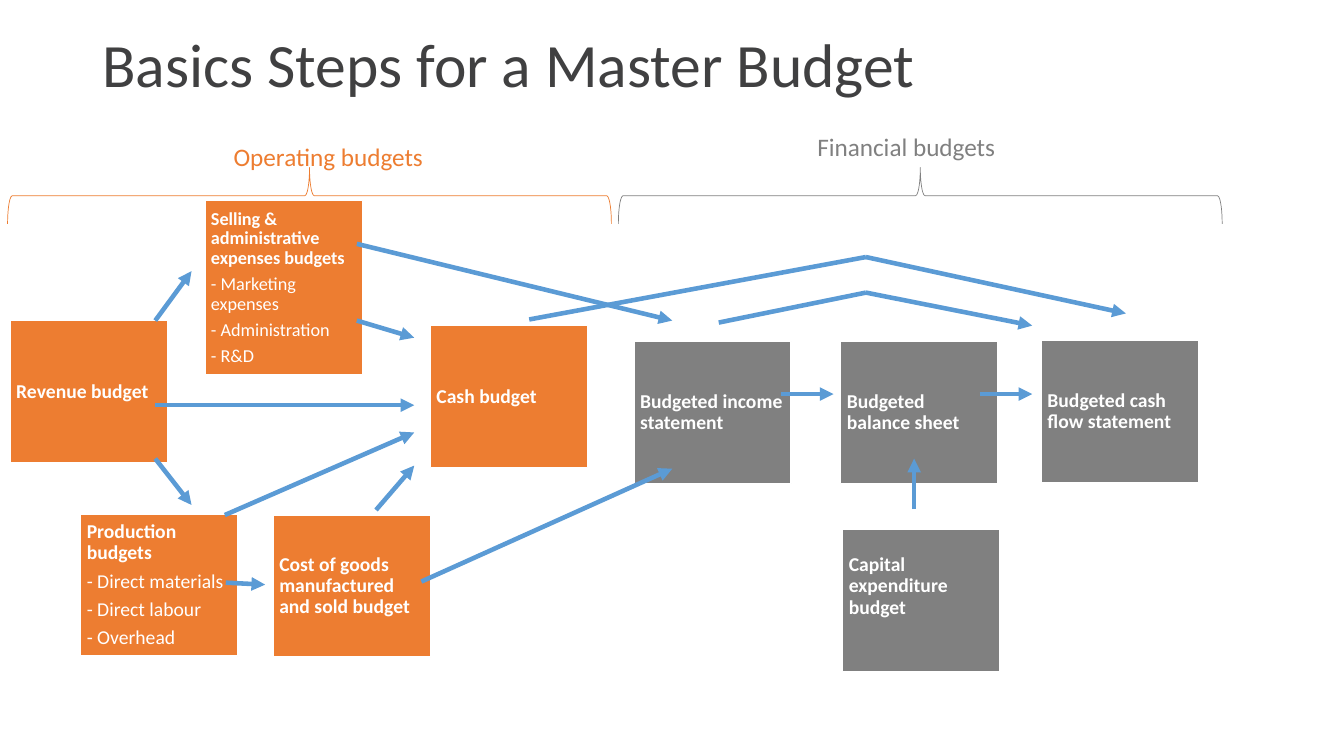
from lxml import etree
from pptx import Presentation
from pptx import util as u
from pptx.dml.color import RGBColor
from pptx.enum import shapes, text
from pptx.oxml import ns

ORANGE = RGBColor(0xED, 0x7D, 0x31)
GREY = RGBColor(0x80, 0x80, 0x80)
BLUE = RGBColor(0x5B, 0x9B, 0xD5)
WHITE = RGBColor(0xFF, 0xFF, 0xFF)
TITLE_GREY = RGBColor(0x40, 0x40, 0x41)
FONT = "Calibri"
CARD_WIDTH, CARD_HEIGHT = 112.3, 101.5
BRACE_DEPTH = 40.3

OPERATING_CARDS = [
    (1.8, 139, ["Revenue budget"], {}),
    (52.2, 277.2, ["Production budgets", "- Direct materials", "- Direct labour", "- Overhead"], {}),
    (189.7, 277.9, ["Cost of goods manufactured and sold budget"], {}),
    (141.5, 53.3, ["Selling & administrative expenses budgets", "- Marketing expenses",
                   "- Administration", "- R&D"], {"height": 124.6, "size": 13, "inset": 3.8}),
    (302, 142.6, ["Cash budget"], {}),
]
FINANCIAL_CARDS = [
    (11.2, 154.1, ["Budgeted income statement"], {}),
    (158.8, 154.1, ["Budgeted balance sheet"], {}),
    (302.1, 153.4, ["Budgeted cash flow statement"], {}),
    (160.2, 288, ["Capital expenditure budget"], {"bottom_inset": 24}),
]
FLOWS = [
    [(105.5, 237.6), (131.4, 270.7)],
    [(105.5, 139), (131.4, 103.7)],
    [(155.9, 326.2), (184, 327.6)],
    [(263.2, 274.3), (290.5, 242.6)],
    [(249.5, 139), (290.5, 151.2)],
    [(105.5, 199.4), (290.5, 199.4)],
    [(249.5, 84.2), (474.8, 139)],
    [(295.6, 325.4), (474.8, 244.8)],
    [(155.2, 277.9), (290.5, 218.9)],
    [(372.6, 138.2), (613.1, 93.6), (798.8, 133.9)],
    [(552.6, 191.5), (590, 191.5)],
    [(647.6, 273.6), (647.6, 237.6)],
    [(694.4, 191.5), (731.9, 191.5)],
    [(508, 140.4), (613.1, 119), (731.9, 142.6)],
]


def style_font(font, size, color, bold=False):
    font.name = FONT
    font.size = u.Pt(size)
    font.color.rgb = color
    font.bold = bold


def add_title(slide, left, top, width, height):
    title = slide.shapes.title
    title.left, title.top = u.Pt(left), u.Pt(top)
    title.width, title.height = u.Pt(width), u.Pt(height)
    frame = title.text_frame
    frame.text = "Basics Steps for a Master Budget"
    frame.vertical_anchor = text.MSO_ANCHOR.MIDDLE
    paragraph = frame.paragraphs[0]
    paragraph.alignment = text.PP_ALIGN.LEFT
    paragraph.line_spacing = 0.9
    style_font(paragraph.runs[0].font, 44, TITLE_GREY)


def add_card(slide, left, top, lines, color, height=CARD_HEIGHT, size=14, inset=4.4, bottom_inset=None):
    card = slide.shapes.add_shape(shapes.MSO_SHAPE.RECTANGLE, u.Pt(left), u.Pt(top),
                                  u.Pt(CARD_WIDTH), u.Pt(height))
    card.shadow.inherit = False
    card.fill.solid()
    card.fill.fore_color.rgb = color
    card.line.color.rgb = WHITE
    card.line.width = u.Pt(1)
    frame = card.text_frame
    frame.word_wrap = True
    frame.vertical_anchor = text.MSO_ANCHOR.MIDDLE
    frame.margin_left = frame.margin_right = frame.margin_top = u.Pt(inset)
    frame.margin_bottom = u.Pt(bottom_inset or inset)
    frame.text = "\n".join(lines)
    for index, paragraph in enumerate(frame.paragraphs):
        paragraph.alignment = text.PP_ALIGN.LEFT
        paragraph.line_spacing = 0.9
        paragraph.space_after = u.Pt(size * 0.35)
        style_font(paragraph.runs[0].font, size, WHITE, bold=index == 0)


def add_brace(slide, left, middle, span, color):
    brace = slide.shapes.add_shape(
        shapes.MSO_SHAPE.LEFT_BRACE, u.Pt(left + (span - BRACE_DEPTH) / 2),
        u.Pt(middle - span / 2), u.Pt(BRACE_DEPTH), u.Pt(span))
    brace.rotation = 90
    brace.shadow.inherit = False
    brace.fill.background()
    brace.line.color.rgb = color
    brace.line.width = u.Pt(0.5)


def add_label(slide, left, top, caption, color):
    label = slide.shapes.add_textbox(u.Pt(left), u.Pt(top), u.Pt(381.6), u.Pt(29))
    label.text_frame.word_wrap = True
    label.text_frame.text = caption
    style_font(label.text_frame.paragraphs[0].runs[0].font, 18, color)


def add_budget_region(slide, left, top, width, caption, label_offset, cards, color):
    for card_left, card_top, lines, options in cards:
        add_card(slide, left + card_left, top + card_top, lines, color, **options)
    add_brace(slide, left, top + 49.8, width, color)
    label_left, label_top = label_offset
    add_label(slide, left + label_left, top + label_top, caption, color)


def add_flows(slide, left, top):
    for points in FLOWS:
        for start, end in zip(points, points[1:]):
            connector = slide.shapes.add_connector(
                shapes.MSO_CONNECTOR.STRAIGHT, u.Pt(left + start[0]), u.Pt(top + start[1]),
                u.Pt(left + end[0]), u.Pt(top + end[1]))
            connector.line.color.rgb = BLUE
            connector.line.width = u.Pt(3.25)
            if end == points[-1]:
                etree.SubElement(connector.line._get_or_add_ln(), ns.qn("a:tailEnd"), type="triangle")
            etree.SubElement(connector._element.spPr, ns.qn("a:effectLst"))


def main():
    presentation = Presentation()
    presentation.slide_width, presentation.slide_height = u.Pt(960), u.Pt(540)
    slide = presentation.slides.add_slide(presentation.slide_layouts[5])
    add_title(slide, 66, -3.6, 828, 104.4)
    add_budget_region(slide, 5.4, 90, 431.3, "Operating budgets", (154.4, 7.2), OPERATING_CARDS, ORANGE)
    add_budget_region(slide, 441.7, 90, 431.3, "Financial budgets", (135, 0), FINANCIAL_CARDS, GREY)
    add_flows(slide, 5.4, 90)
    presentation.save("out.pptx")


if __name__ == "__main__":
    main()
